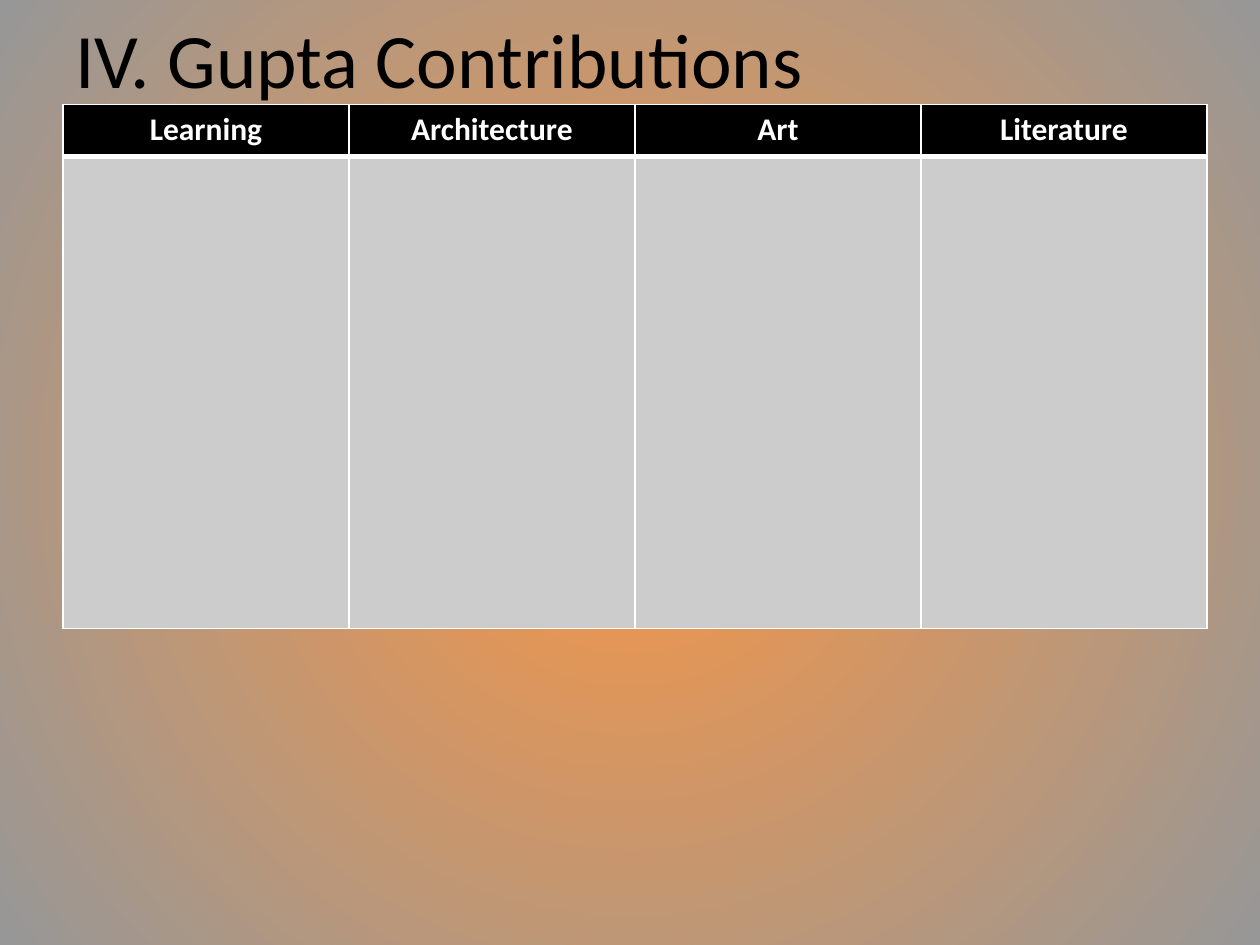
from lxml import etree
from pptx import Presentation
from pptx.dml.color import RGBColor
from pptx.enum.text import MSO_ANCHOR, PP_ALIGN
from pptx.oxml.ns import qn
from pptx.util import Inches, Pt

CENTER, LEFT = PP_ALIGN.CENTER, PP_ALIGN.LEFT
MIDDLE = MSO_ANCHOR.MIDDLE
BLACK = RGBColor(0x00, 0x00, 0x00)
WHITE = RGBColor(0xFF, 0xFF, 0xFF)
SILVER = RGBColor(0xCC, 0xCC, 0xCC)
GRAY = RGBColor(0x97, 0x97, 0x97)
ORANGE = RGBColor(0xF7, 0x96, 0x46)
FONT = "Calibri"
HEADINGS = ["Learning", "Architecture", "Art", "Literature"]
COLUMN_WIDTH = 2.27
ROW_HEIGHTS = [0.41, 3.75]


def add_span(para, text, size, color, bold=False):
    span = para.add_run()
    span.text = text
    span.font.name = FONT
    span.font.size = Pt(size)
    span.font.bold = bold
    span.font.color.rgb = color


def add_borders(cell, bottom_width):
    properties = cell._tc.get_or_add_tcPr()
    sides = [("a:lnL", 1), ("a:lnR", 1), ("a:lnT", 1), ("a:lnB", bottom_width)]
    for index, (tag, width) in enumerate(sides):
        line = etree.Element(qn(tag), w=str(Pt(width)))
        fill = etree.SubElement(line, qn("a:solidFill"))
        etree.SubElement(fill, qn("a:srgbClr"), val=str(WHITE))
        properties.insert(index, line)


deck = Presentation()
deck.slide_width = Inches(10)
deck.slide_height = Inches(7.5)
page = deck.slides.add_slide(deck.slide_layouts[5])

backdrop = page.background.fill
backdrop.gradient()
for stop, color, position in zip(backdrop.gradient_stops, [ORANGE, GRAY], [0, 1]):
    stop.color.rgb = color
    stop.position = position
gradient = page.element.find(".//" + qn("a:gradFill"))
radial = etree.Element(qn("a:path"))
radial.set("path", "circle")
etree.SubElement(radial, qn("a:fillToRect"), l="50000", t="50000", r="50000", b="50000")
gradient.replace(gradient.find(qn("a:lin")), radial)

frame = page.shapes.add_table(
    len(ROW_HEIGHTS), len(HEADINGS), Inches(0.5), Inches(0.83),
    Inches(COLUMN_WIDTH * len(HEADINGS)), Inches(sum(ROW_HEIGHTS)))
table = frame.table
for row, height in zip(table.rows, ROW_HEIGHTS):
    row.height = Inches(height)
for index, heading in enumerate(HEADINGS):
    table.columns[index].width = Inches(COLUMN_WIDTH)
    header, body = table.cell(0, index), table.cell(1, index)
    for cell, color, bottom_width in [(header, BLACK, 3), (body, SILVER, 1)]:
        cell.fill.solid()
        cell.fill.fore_color.rgb = color
        add_borders(cell, bottom_width)
    para = header.text_frame.paragraphs[0]
    para.alignment = CENTER
    add_span(para, heading, 18, WHITE, bold=True)

title = page.shapes.title
title.left, title.top = Inches(0.5), Inches(0)
title.width, title.height = Inches(9), Inches(0.92)
title.text_frame.vertical_anchor = MIDDLE
para = title.text_frame.paragraphs[0]
para.alignment = LEFT
add_span(para, "IV. Gupta Contributions", 44, BLACK)
frame.element.addnext(title.element)

deck.save("out.pptx")
